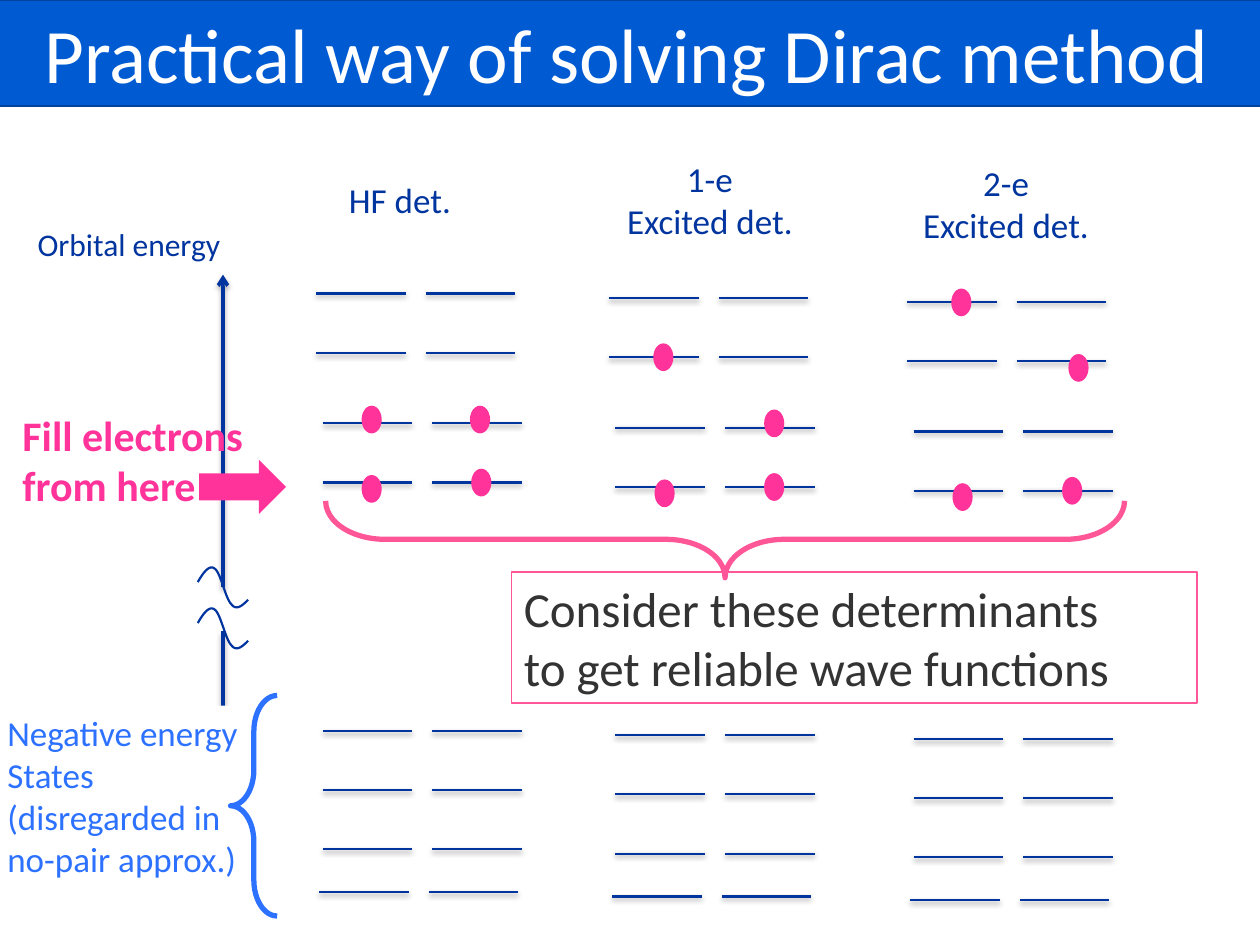
from lxml import etree
from pptx import Presentation
from pptx.dml.color import RGBColor as RGB
from pptx.enum.shapes import MSO_CONNECTOR as Conn, MSO_SHAPE as Kind
from pptx.enum.text import MSO_ANCHOR as Anchor, MSO_AUTO_SIZE as Fit, PP_ALIGN as Align
from pptx.oxml import parse_xml
from pptx.util import Inches, Pt

COLORS = {"navy": "00349E", "pink": "FF3399", "rose": "FF5698", "sky": "2C71FF",
          "blue": "005BD3", "edge": "00439C", "white": "FFFFFF", "gray": "333333"}
NS = "http://schemas.openxmlformats.org/drawingml/2006/main"
COLS, ROWS = 100, 75  # grid of the slide
FONT = "Calibri"


class Board:
    def __init__(self, deck):
        self.slide = deck.slides.add_slide(deck.slide_layouts[6])
        self.shapes = self.slide.shapes
        self.col = deck.slide_width / COLS
        self.row = deck.slide_height / ROWS

    def x(self, cols):
        return round(cols * self.col)

    def y(self, rows):
        return round(rows * self.row)

    def box(self, at):
        left, top, wide, high = at
        return self.x(left), self.y(top), self.x(wide), self.y(high)

    def rgb(self, name):
        return RGB.from_string(COLORS[name])

    def stroke(self, line, color, width):
        line.color.rgb = self.rgb(color)
        line.width = Pt(width)

    def line(self, start, end, width=1.25, alpha=38, dist=1.6, arrow=False):
        link = self.shapes.add_connector(
            Conn.STRAIGHT, self.x(start[0]), self.y(start[1]), self.x(end[0]), self.y(end[1]))
        self.stroke(link.line, "navy", width)
        props = link._element.spPr
        if arrow:
            etree.SubElement(props.find(f"{{{NS}}}ln"), f"{{{NS}}}tailEnd", type="arrow")
        props.append(parse_xml(
            f'<a:effectLst xmlns:a="{NS}"><a:outerShdw blurRad="{Pt(3.1)}" dist="{Pt(dist)}" '
            f'dir="5400000" rotWithShape="0"><a:srgbClr val="000000">'
            f'<a:alpha val="{alpha * 1000}"/></a:srgbClr></a:outerShdw></a:effectLst>'))

    def shape(self, kind, at, fill=None, edge=None, width=1.25):
        item = self.shapes.add_shape(kind, *self.box(at))
        item.shadow.inherit = False
        if fill:
            item.fill.solid()
            item.fill.fore_color.rgb = self.rgb(fill)
        else:
            item.fill.background()
        if edge:
            self.stroke(item.line, edge, width)
        else:
            item.line.fill.background()
        return item

    def brace(self, at, color, turn=0):
        item = self.shape(Kind.LEFT_BRACE, at, edge=color, width=3)
        item.adjustments[0] = 0.77
        item.rotation = turn

    def text(self, item, lines, size, color, align=Align.LEFT, bold=False, wrap=True):
        frame = item.text_frame
        frame.text = "\n".join(lines)
        frame.word_wrap = wrap
        frame.auto_size = Fit.SHAPE_TO_FIT_TEXT
        frame.vertical_anchor = Anchor.TOP
        for para in frame.paragraphs:
            para.alignment = align
            font = para.font
            font.name, font.size, font.bold = FONT, Pt(size), bold
            font.color.rgb = self.rgb(color)

    def label(self, at, lines, size, color="navy", **style):
        self.text(self.shapes.add_textbox(*self.box(at)), lines, size, color, wrap=False, **style)

    def wave(self, left, top):
        """Break mark: three Bezier arcs drawn as short steps."""
        arcs = [[(0, 1.2), (0.4, 0.5), (0.9, -0.2), (1.3, 0.1)],
                [(1.3, 0.1), (1.8, 0.3), (2.2, 2.6), (2.7, 3)],
                [(2.7, 3), (3.1, 3.5), (3.6, 3), (4, 2.6)]]
        steps = 10
        spots = []
        for arc in arcs:
            for t in (i / steps for i in range(steps + 1)):
                mix = ((1 - t) ** 3, 3 * t * (1 - t) ** 2, 3 * t * t * (1 - t), t ** 3)
                dx, dy = (sum(m * p[k] for m, p in zip(mix, arc)) for k in (0, 1))
                spots.append((self.x(left + dx), self.y(top + dy)))
        pen = self.shapes.build_freeform(*spots[0])
        pen.add_line_segments(spots[1:], close=False)
        curve = pen.convert_to_shape()
        curve.shadow.inherit = False
        curve.fill.background()
        self.stroke(curve.line, "navy", 1.25)


# Level heights with their sideways shift, shared by all determinants
LEVELS = [(23.3, -0.5), (28, -0.5), (33.6, 0), (38.3, 0),
          (58, 0), (62.7, 0), (67.4, 0), (70.8, -0.25)]
PAIR = (25.6, 34.3)
LONG = 7.1
DOT = (1.6, 2.2)
BASE = [(28.7, 37.7), (37.4, 37.2)]  # electrons that stay in the lowest level

# Shift of each determinant and its two upper electrons
DETS = [((0, 0), [(28.7, 32.2), (37.3, 32.2)]),
        ((23.25, 0.35), [(28.6, 26.9), (37.4, 32.15)]),
        ((46.9, 0.65), [(28.6, 22.25), (37.9, 27.45)])]


def main():
    deck = Presentation()
    deck.slide_width, deck.slide_height = Inches(10), Inches(7.5)
    board = Board(deck)

    # Energy axis with its break
    axis = 17.7
    board.line((axis, 46.6), (axis, 21.8), 2, 35, 1.8, arrow=True)
    for top in (45, 48.25):
        board.wave(15.7, top)
    board.line((axis, 70.6), (axis, 50.1), 2, 35, 1.8)
    board.label((2, 17.4, 16.7, 4), ["Orbital energy"], 18)

    # Levels and electrons
    for (dx, dy), upper in DETS:
        for high, shift in LEVELS:
            for left in PAIR:
                start = left + shift + dx
                board.line((start, high + dy), (start + LONG, high + dy))
        for left, top in upper + BASE:
            board.shape(Kind.OVAL, (left + dx, top + dy, *DOT), "pink")

    # Filling note
    board.label((0.8, 32, 20.5, 9.1), ["Fill electrons", "from here"], 24, "pink", bold=True)
    board.shape(Kind.RIGHT_ARROW, (15.8, 36.5, 6.9, 4.3), "pink")

    # Negative energy states
    note = board.shape(Kind.RECTANGLE, (-0.4, 56, 21.7, 17.8), "white")
    board.text(note, ["Negative energy", "States", "(disregarded in no-pair approx.)"], 20, "sky")
    board.brace((18.3, 55.2, 3.7, 17.5), "sky")

    # Title bar
    bar = board.shape(Kind.RECTANGLE, (-1.1, 0, 101.7, 8.4), "blue", "edge")
    board.text(bar, ["Practical way of solving Dirac method"], 44, "white", Align.CENTER)

    # Column heads
    board.label((26.7, 13.7, 10.2, 4.4), ["HF det."], 20)
    for left, top, count in ((48.7, 12, "1-e"), (72.2, 12.3, "2-e")):
        board.label((left, top, 15.3, 7.7), [count, "Excited det."], 20, align=Align.CENTER)

    # Conclusion
    result = board.shape(Kind.RECTANGLE, (40.6, 45.4, 54.4, 10.4), "white", "rose", 0.75)
    board.text(result, ["Consider these determinants", "to get reliable wave functions"],
               28, "gray")
    board.brace((54.5, 11.1, 6.1, 63.4), "rose", 270)

    deck.save("out.pptx")


if __name__ == "__main__":
    main()
